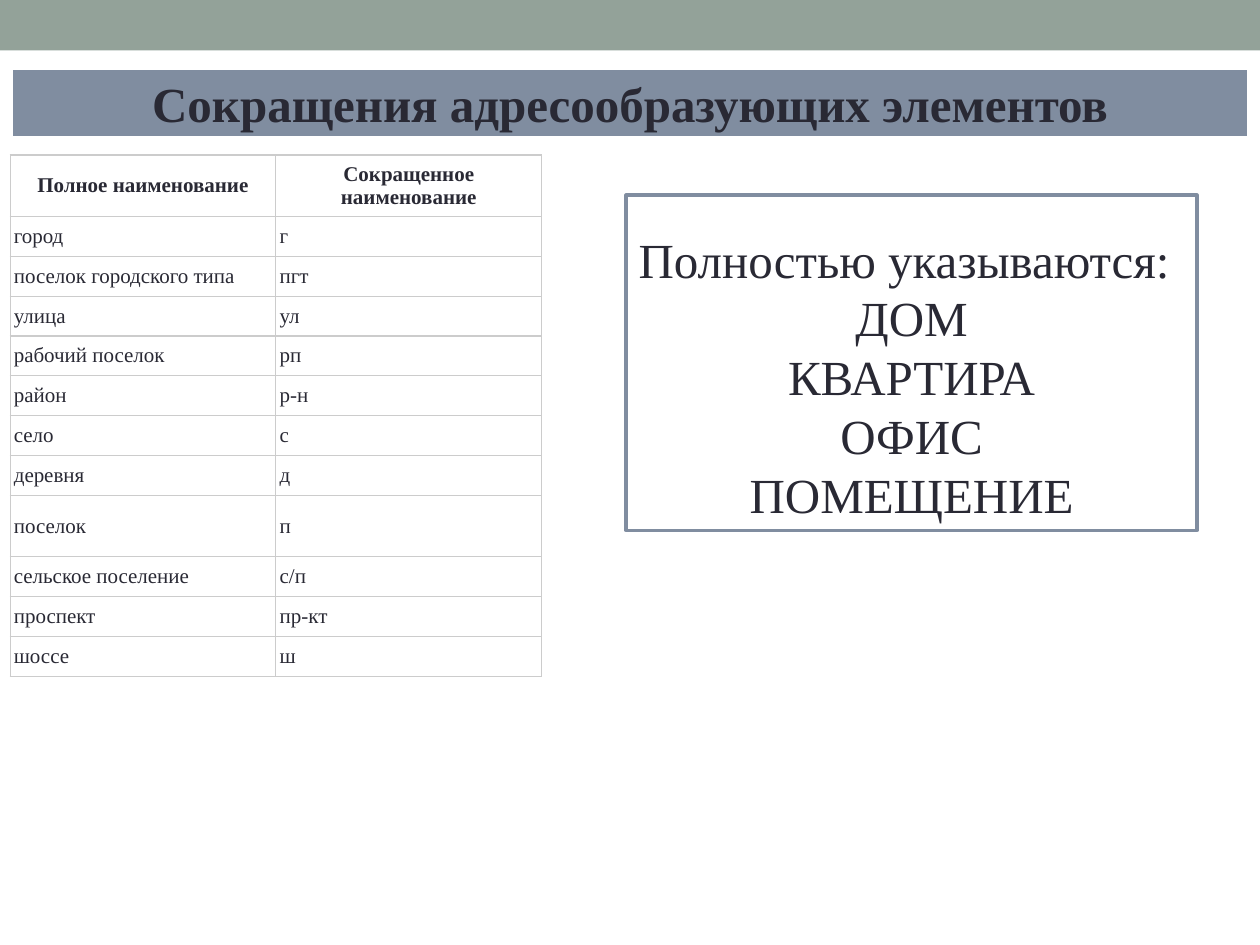
from lxml import etree
from pptx import Presentation
from pptx import util as u
from pptx.dml.color import RGBColor
from pptx.enum import shapes, text
from pptx.oxml import ns

# Content
TITLE = "Сокращения адресообразующих элементов"
HEADINGS = ("Полное наименование", "Сокращенное наименование")
ABBREVIATIONS = [
    ("город", "г"),
    ("поселок городского типа", "пгт"),
    ("улица", "ул"),
    ("рабочий поселок", "рп"),
    ("район", "р-н"),
    ("село", "с"),
    ("деревня", "д"),
    ("поселок", "п"),
    ("сельское поселение", "с/п"),
    ("проспект", "пр-кт"),
    ("шоссе", "ш"),
]
FULL_INTRO = "Полностью указываются:"
FULL_WORDS = ["ДОМ", "КВАРТИРА", "ОФИС", "ПОМЕЩЕНИЕ"]

# Style
COLORS = {"band": "93A299", "slate": "808DA0", "ink": "292934",
          "white": "FFFFFF", "grid": "CCCCCC"}
FONT = "Times New Roman"
CENTER, JUSTIFY, LEFT = (text.PP_ALIGN.CENTER, text.PP_ALIGN.JUSTIFY,
                         text.PP_ALIGN.LEFT)
MIDDLE = text.MSO_ANCHOR.MIDDLE

# Layout in inches
WIDTH, HEIGHT = 10, 7.5
MARGIN = 0.08
TABLE_TOP, TABLE_WIDTH, TABLE_HEIGHT = 1.23, 4.22, 4.14
TALL_ROW = 0.49
TALL_ROWS = {0, 8}
CELL_INSET = 0.03


def color(name):
    return RGBColor.from_string(COLORS[name])


def paint(target, fill, line=None, weight=0):
    target.fill.solid()
    target.fill.fore_color.rgb = color(fill)
    if line:
        target.line.color.rgb = color(line)
        target.line.width = u.Pt(weight)


def place(shape, left, top, width, height):
    shape.left, shape.top = u.Inches(left), u.Inches(top)
    shape.width, shape.height = u.Inches(width), u.Inches(height)


def write(paragraph, words, size, align, bold=False):
    paragraph.alignment = align
    run = paragraph.add_run()
    run.text = words
    run.font.name, run.font.size, run.font.bold = FONT, u.Pt(size), bold
    run.font.color.rgb = color("ink")


def add_box(slide, left, top, width, height):
    box = slide.shapes.add_shape(
        shapes.MSO_SHAPE.RECTANGLE, *map(u.Inches, (left, top, width, height)))
    box.shadow.inherit = False
    return box


def add_borders(cell):
    properties = cell._tc.get_or_add_tcPr()
    for index, side in enumerate(("lnL", "lnR", "lnT", "lnB")):
        line = etree.Element(ns.qn(f"a:{side}"), w=str(u.Pt(0.75)))
        fill = etree.SubElement(line, ns.qn("a:solidFill"))
        etree.SubElement(fill, ns.qn("a:srgbClr"), val=COLORS["grid"])
        properties.insert(index, line)


def add_abbreviations(slide):
    rows = [HEADINGS, *ABBREVIATIONS]
    table = slide.shapes.add_table(
        len(rows), len(HEADINGS), *map(u.Inches, (
            MARGIN, TABLE_TOP, TABLE_WIDTH, TABLE_HEIGHT))).table
    short_row = ((TABLE_HEIGHT - TALL_ROW * len(TALL_ROWS))
                 / (len(rows) - len(TALL_ROWS)))
    for r, row in enumerate(rows):
        table.rows[r].height = u.Inches(
            TALL_ROW if r in TALL_ROWS else short_row)
        for c, words in enumerate(row):
            cell = table.cell(r, c)
            paint(cell, "white")
            add_borders(cell)
            cell.vertical_anchor = MIDDLE
            cell.margin_left = cell.margin_right = u.Inches(CELL_INSET)
            cell.margin_top = cell.margin_bottom = u.Inches(CELL_INSET)
            write(cell.text_frame.paragraphs[0], words, 12,
                  LEFT if r else CENTER, bold=r == 0)


def main():
    deck = Presentation()
    deck.slide_width, deck.slide_height = u.Inches(WIDTH), u.Inches(HEIGHT)
    slide = deck.slides.add_slide(deck.slide_layouts[5])

    # Top band
    band = add_box(slide, 0, 0, WIDTH, 0.4)
    paint(band, "band")
    band.line.fill.background()

    # Title
    title = slide.shapes.title
    place(title, MARGIN, 0.53, WIDTH - 2 * MARGIN, 0.57)
    paint(title, "slate", "white", 3.5)
    title.text_frame.vertical_anchor = MIDDLE
    title.text_frame.auto_size = text.MSO_AUTO_SIZE.NONE
    write(title.text_frame.paragraphs[0], TITLE, 28, CENTER, bold=True)

    add_abbreviations(slide)

    # Words that stay in full
    full = add_box(slide, 4.97, 1.55, 4.53, 2.66)
    paint(full, "white", "slate", 2.08)
    frame = full.text_frame
    frame.word_wrap = True
    frame.vertical_anchor = MIDDLE
    frame.margin_top = u.Inches(0.26)
    write(frame.paragraphs[0], FULL_INTRO, 28, JUSTIFY)
    for word in FULL_WORDS:
        write(frame.add_paragraph(), word, 28, CENTER)

    deck.save("out.pptx")


if __name__ == "__main__":
    main()
